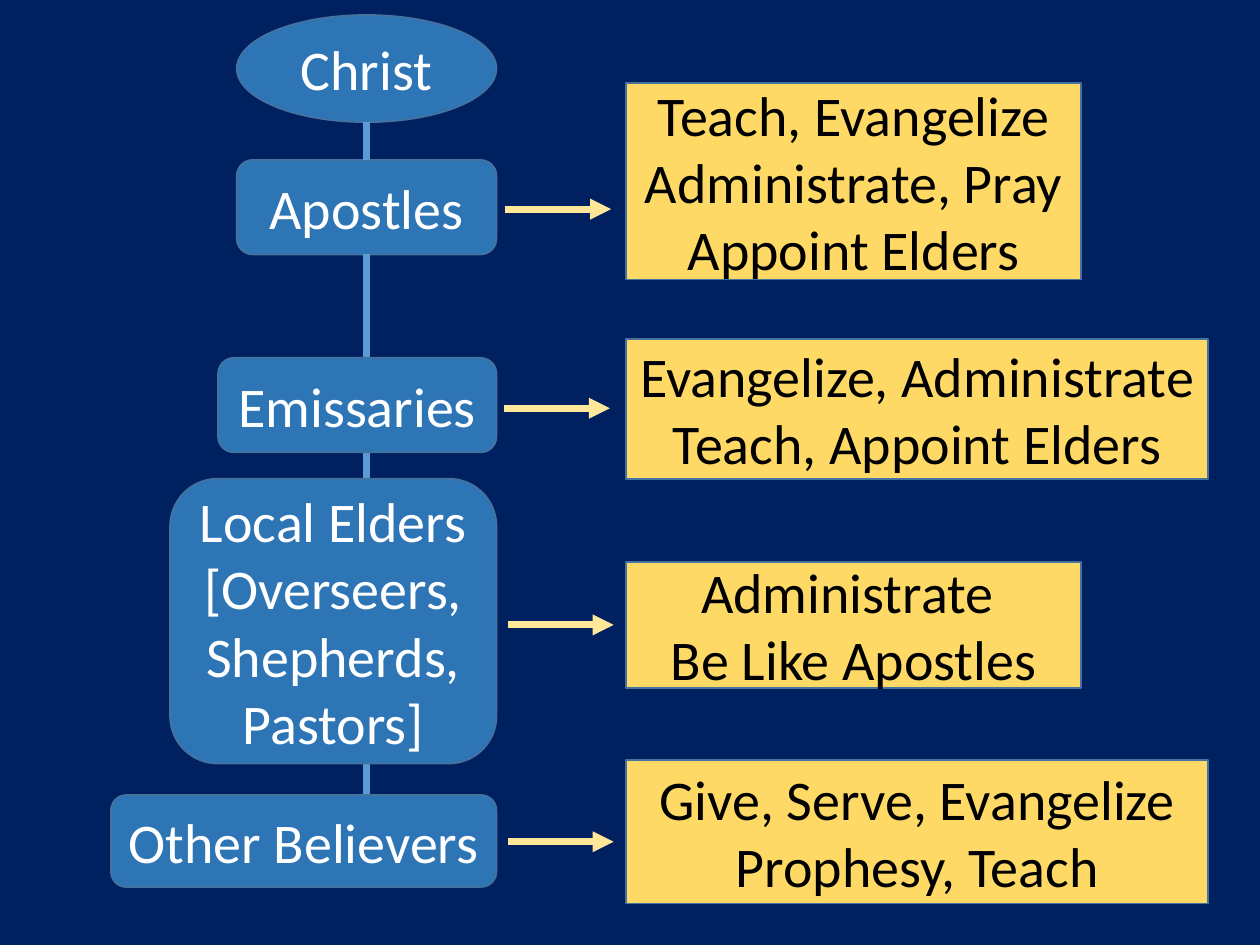
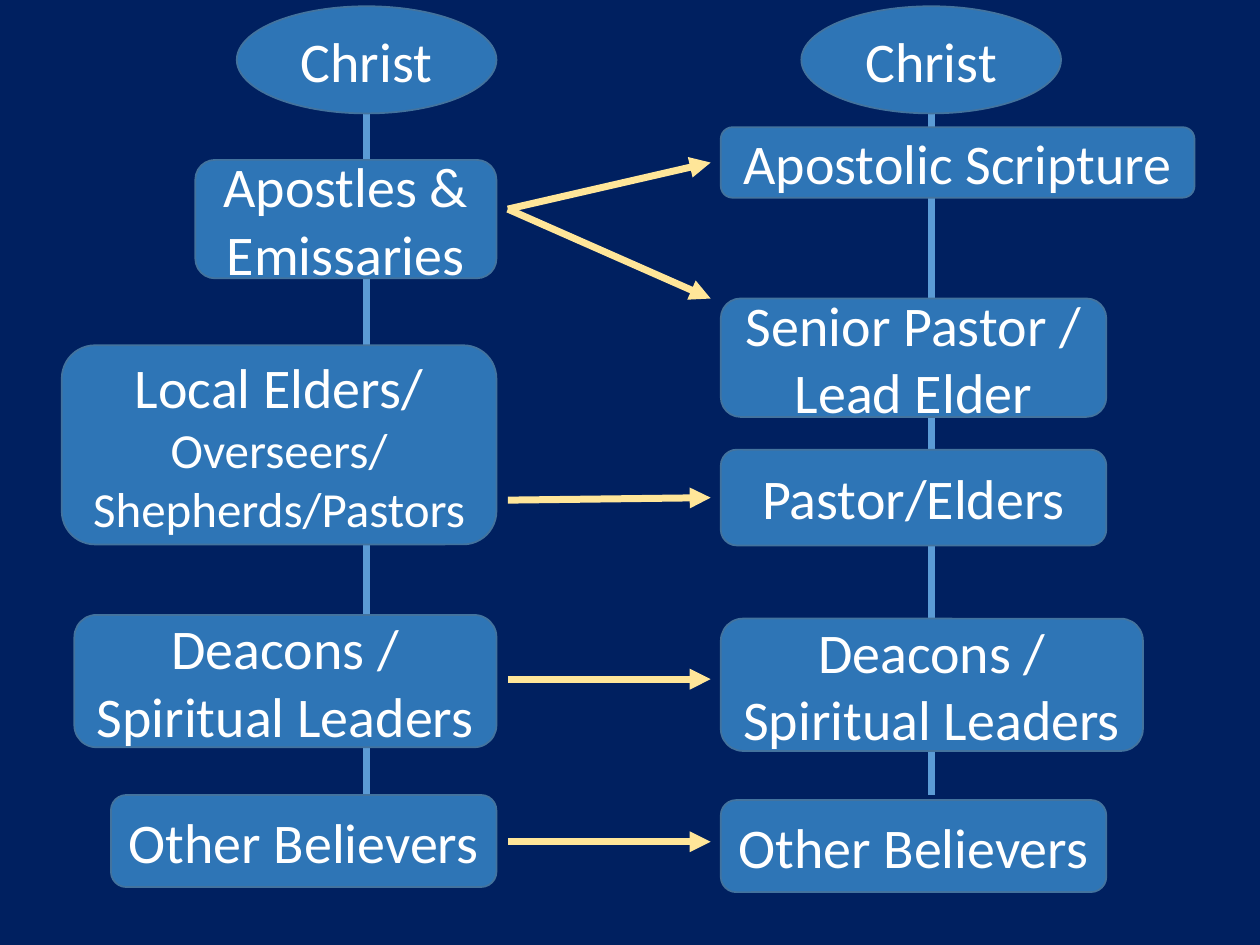
"""Build two slides that compare church leadership structures."""
from dataclasses import dataclass

from lxml import etree
from pptx import Presentation
from pptx.dml.color import RGBColor
from pptx.enum.shapes import MSO_CONNECTOR, MSO_SHAPE
from pptx.enum.text import MSO_ANCHOR, PP_ALIGN
from pptx.oxml.ns import qn
from pptx.shapes.autoshape import Shape
from pptx.shapes.connector import Connector
from pptx.shapes.shapetree import GroupShapes, SlideShapes
from pptx.util import Pt

ELLIPSE = MSO_SHAPE.OVAL
ROUNDED = MSO_SHAPE.ROUNDED_RECTANGLE
RECTANGLE = MSO_SHAPE.RECTANGLE
STRAIGHT = MSO_CONNECTOR.STRAIGHT
CENTER = PP_ALIGN.CENTER
MIDDLE = MSO_ANCHOR.MIDDLE

NAVY, BLUE, OUTLINE, SPINE = "002060", "2E75B6", "43739E", "5B9BD5"
GOLD, PALE_GOLD, WHITE, BLACK = "FFD966", "FFE699", "FFFFFF", "000000"
FONT = "Calibri"
TEXT_SIZE, SMALL_SIZE = 32, 28
LEFT_COLUMN_EDGE = 283.7
RIGHT_COLUMN_EDGE = 411.9
DUTY_EDGE = 357.9
LEFT_SPINE, RIGHT_SPINE = 209.5, 532.1
CHRIST_WIDTH, CHRIST_HEIGHT = 148.4, 61.2
BELIEVERS_WIDTH, BELIEVERS_HEIGHT = 220.3, 52.6
TOP, BOTTOM = 0, 2

Shapes = SlideShapes | GroupShapes


@dataclass(frozen=True)
class Box:
    """A filled shape holding centred lines of text."""

    lines: tuple[str, ...]
    left: float
    top: float
    width: float
    height: float
    kind: MSO_SHAPE = ROUNDED
    fill: str = BLUE
    color: str = WHITE
    later_size: float = TEXT_SIZE


@dataclass(frozen=True)
class Line:
    """A straight line, with an arrowhead at its end if wanted."""

    start_x: float
    start_y: float
    end_x: float
    end_y: float
    color: str = PALE_GOLD
    arrow: bool = True


def rgb(color: str) -> RGBColor:
    """Turn a hex string into a colour."""
    return RGBColor.from_string(color)


def christ(center: float, top: float) -> Box:
    """Describe the ellipse at the head of a column."""
    return Box(("Christ",), center - CHRIST_WIDTH / 2, top,
               CHRIST_WIDTH, CHRIST_HEIGHT, kind=ELLIPSE)


def left_box(top: float, width: float, height: float, *lines: str,
             later_size: float = TEXT_SIZE) -> Box:
    """Describe a box that ends at the left column's right edge."""
    return Box(lines, LEFT_COLUMN_EDGE - width, top, width, height,
               later_size=later_size)


def right_box(top: float, width: float, height: float, *lines: str) -> Box:
    """Describe a box that starts at the right column's left edge."""
    return Box(lines, RIGHT_COLUMN_EDGE, top, width, height)


def duty_box(top: float, width: float, height: float, *lines: str) -> Box:
    """Describe a gold panel that lists duties."""
    return Box(lines, DUTY_EDGE, top, width, height, RECTANGLE, GOLD, BLACK)


def spine(center: float, top: float, bottom: float) -> Line:
    """Describe the vertical line behind a column."""
    return Line(center, top, center, bottom, SPINE, arrow=False)


def write_para(para, text: str, *, size: float, color: str) -> None:
    """Fill a paragraph with one centred, formatted span."""
    para.alignment = CENTER
    span = para.add_run()
    span.text = text
    span.font.name = FONT
    span.font.size = Pt(size)
    span.font.color.rgb = rgb(color)


def draw_box(shapes: Shapes, box: Box) -> Shape:
    """Draw a box with its text."""
    shape = shapes.add_shape(box.kind, Pt(box.left), Pt(box.top),
                             Pt(box.width), Pt(box.height))
    shape.shadow.inherit = False
    shape.fill.solid()
    shape.fill.fore_color.rgb = rgb(box.fill)
    shape.line.color.rgb = rgb(OUTLINE)
    shape.line.width = Pt(1)
    frame = shape.text_frame
    frame.word_wrap = True
    frame.vertical_anchor = MIDDLE
    for index, text in enumerate(box.lines):
        para = frame.add_paragraph() if index else frame.paragraphs[0]
        size = box.later_size if index else TEXT_SIZE
        write_para(para, text, size=size, color=box.color)
    return shape


def draw_line(shapes: Shapes, line: Line) -> Connector:
    """Draw a line without a shadow."""
    connector = shapes.add_connector(STRAIGHT, Pt(line.start_x), Pt(line.start_y),
                                     Pt(line.end_x), Pt(line.end_y))
    connector.line.color.rgb = rgb(line.color)
    connector.line.width = Pt(4)
    properties = connector._element.spPr
    if line.arrow:
        outline = properties.find(qn("a:ln"))
        etree.SubElement(outline, qn("a:tailEnd"), type="triangle")
    etree.SubElement(properties, qn("a:effectLst"))
    return connector


def draw_column(shapes: Shapes, line: Line, boxes: list[Box]) -> None:
    """Draw a grouped column of boxes over its spine."""
    group = shapes.add_group_shape()
    draw_line(group.shapes, line)
    for box in boxes:
        draw_box(group.shapes, box)


def build_duties(shapes: Shapes) -> None:
    """Draw the leadership chain with the duties of each level."""
    draw_box(shapes, christ(LEFT_SPINE, 8.6))
    apostles = draw_box(shapes, left_box(91.4, CHRIST_WIDTH, 54, "Apostles"))
    upper = draw_line(shapes, spine(LEFT_SPINE, 69.8, 91.4))
    upper.end_connect(apostles, TOP)
    lower = draw_line(shapes, spine(LEFT_SPINE, 145.4, 454.3))
    lower.begin_connect(apostles, BOTTOM)
    boxes = [
        left_box(204.5, 159.1, 54, "Emissaries"),
        left_box(273.6, 186.5, 162.7, "Local Elders",
                 "[Overseers, Shepherds, Pastors]"),
        left_box(454.3, BELIEVERS_WIDTH, BELIEVERS_HEIGHT, "Other Believers"),
        duty_box(47.5, 260, 112.3, "Teach, Evangelize",
                 "Administrate, Pray Appoint Elders"),
        duty_box(193.7, 332.6, 79.9,
                 "Evangelize, Administrate Teach, Appoint Elders"),
        duty_box(321.1, 260, 72, "Administrate ", "Be Like Apostles"),
        duty_box(434.2, 332.6, 82.1, "Give, Serve, Evangelize Prophesy, Teach"),
    ]
    for box in boxes:
        draw_box(shapes, box)
    for start, height in ((288.7, 119.5), (288, 233.3), (290.2, 357.1), (290.2, 481)):
        draw_line(shapes, Line(start, height, start + 60.5, height))


def build_comparison(shapes: Shapes) -> None:
    """Draw the early chain beside its present-day counterpart."""
    for start, end in ((119.5, 92.9), (285.8, 284.4), (388.1, 388.1), (481, 481)):
        draw_line(shapes, Line(290.2, start, 406.1, end))
    draw_column(shapes, spine(LEFT_SPINE, 64.1, 454.3), [
        christ(LEFT_SPINE, 3.6),
        left_box(91.4, 172.1, 67.7, "Apostles & Emissaries"),
        left_box(197.3, 248.4, 113.8, "Local Elders/", "Overseers/",
                 "Shepherds/Pastors", later_size=SMALL_SIZE),
        left_box(351.4, 241.2, 75.6, "Deacons / Spiritual Leaders"),
        left_box(454.3, BELIEVERS_WIDTH, BELIEVERS_HEIGHT, "Other Believers"),
    ])
    draw_column(shapes, spine(RIGHT_SPINE, 64.1, 454.3), [
        christ(RIGHT_SPINE, 3.6),
        right_box(170.6, BELIEVERS_WIDTH, 67.7, "Senior Pastor / Lead Elder"),
        right_box(257, BELIEVERS_WIDTH, 54.7, "Pastor/Elders"),
        right_box(353.5, 241.2, 75.6, "Deacons / Spiritual Leaders"),
        right_box(457.2, BELIEVERS_WIDTH, BELIEVERS_HEIGHT, "Other Believers"),
    ])
    draw_box(shapes, right_box(72.7, 270.7, 40.3, "Apostolic Scripture"))
    draw_line(shapes, Line(290.2, 119.5, 406.1, 170.6))


def main() -> None:
    """Build and save the deck."""
    deck = Presentation()
    deck.slide_width, deck.slide_height = Pt(720), Pt(540)
    background = deck.slide_master.background.fill
    background.solid()
    background.fore_color.rgb = rgb(NAVY)
    blank = deck.slide_layouts.get_by_name("Blank")
    for build in (build_duties, build_comparison):
        build(deck.slides.add_slide(blank).shapes)
    deck.save("out.pptx")


if __name__ == "__main__":
    main()
